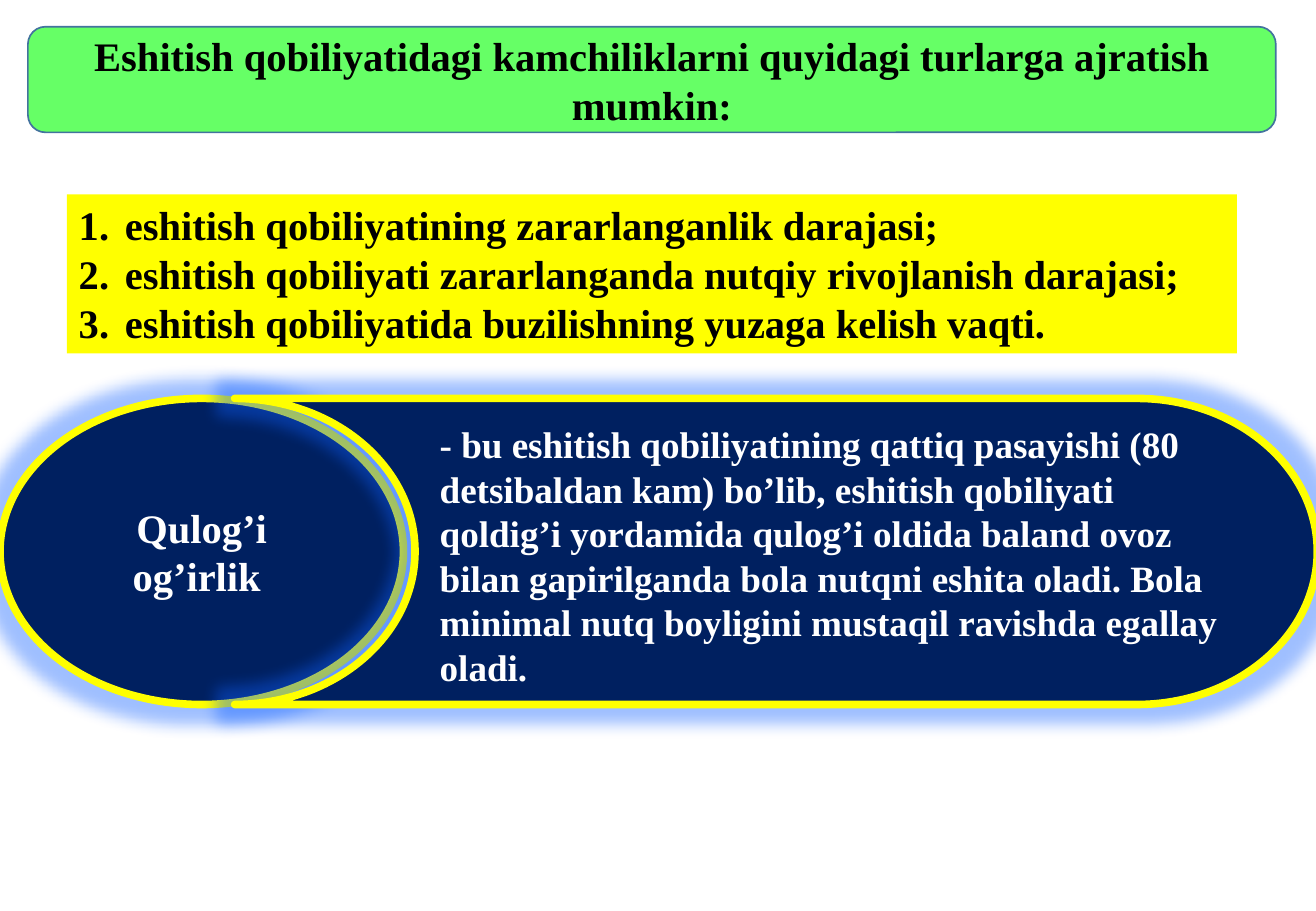
from lxml import etree
from pptx import Presentation
from pptx.dml.color import RGBColor
from pptx.enum import shapes, text
from pptx.oxml import ns
from pptx.util import Inches, Pt

GREEN = RGBColor(0x66, 0xFF, 0x66)
YELLOW = RGBColor(0xFF, 0xFF, 0x00)
NAVY = RGBColor(0x00, 0x20, 0x60)
STEEL = RGBColor(0x43, 0x73, 0x9E)
GLOW = RGBColor(0x10, 0x60, 0xFF)
BLACK = RGBColor(0x00, 0x00, 0x00)
WHITE = RGBColor(0xFF, 0xFF, 0xFF)


def add_panel(kind, box, fill, line=None, width=0):
    shape = slide.shapes.add_shape(kind, *map(Inches, box))
    shape.shadow.inherit = False
    shape.fill.solid()
    shape.fill.fore_color.rgb = fill
    if line is None:
        shape.line.fill.background()
    else:
        shape.line.color.rgb = line
        shape.line.width = Pt(width)
    return shape


def write(shape, lines, size, color, align, anchor):
    frame = shape.text_frame
    frame.word_wrap = True
    frame.vertical_anchor = anchor
    frame.text = "\n".join(lines)
    font_format = {"name": "Times New Roman", "size": Pt(size), "bold": True}
    for paragraph in frame.paragraphs:
        paragraph.alignment = align
        font = paragraph.runs[0].font
        font.color.rgb = color
        for name, value in font_format.items():
            setattr(font, name, value)


presentation = Presentation()
presentation.slide_width = Inches(10.83)
presentation.slide_height = Inches(7.5)
slide = presentation.slides.add_slide(presentation.slide_layouts[6])

LEFT, CENTER = text.PP_ALIGN.LEFT, text.PP_ALIGN.CENTER
TOP, MIDDLE = text.MSO_ANCHOR.TOP, text.MSO_ANCHOR.MIDDLE

# Title
title = add_panel(shapes.MSO_SHAPE.ROUNDED_RECTANGLE, (0.23, 0.22, 10.27, 0.87), GREEN, STEEL, 1)
write(title, ["Eshitish qobiliyatidagi kamchiliklarni quyidagi turlarga ajratish mumkin:"],
      24, BLACK, CENTER, MIDDLE)

# Numbered list
criteria = add_panel(shapes.MSO_SHAPE.RECTANGLE, (0.55, 1.6, 9.63, 1.31), YELLOW)
write(criteria, [
    "eshitish qobiliyatining zararlanganlik darajasi;",
    "eshitish qobiliyati zararlanganda nutqiy rivojlanish darajasi;",
    "eshitish qobiliyatida buzilishning yuzaga kelish vaqti.",
], 24, BLACK, LEFT, TOP)
for paragraph in criteria.text_frame.paragraphs:
    properties = paragraph._p.get_or_add_pPr()
    properties.set("marL", str(Inches(0.38)))
    properties.set("indent", str(-Inches(0.38)))
    etree.SubElement(properties, ns.qn("a:buAutoNum"), type="arabicPeriod")

# Term and definition panels with a blue glow
term = add_panel(shapes.MSO_SHAPE.OVAL, (0, 3.28, 3.32, 2.52), NAVY, YELLOW, 4.5)
write(term, ["Qulog’i og’irlik "], 24, WHITE, CENTER, MIDDLE)
definition = add_panel(shapes.MSO_SHAPE.FLOWCHART_STORED_DATA, (1.93, 3.28, 8.91, 2.52),
                       NAVY, YELLOW, 4.5)
definition.rotation = 180
for shape in (term, definition):
    effects = shape._element.spPr.find(ns.qn("a:effectLst"))
    glow = etree.SubElement(effects, ns.qn("a:glow"), rad=str(Pt(18)))
    color = etree.SubElement(glow, ns.qn("a:srgbClr"), val=str(GLOW))
    etree.SubElement(color, ns.qn("a:alpha"), val="40000")

# Definition text
caption = slide.shapes.add_textbox(Inches(3.52), Inches(3.42), Inches(6.69), Inches(2.32))
write(caption, [
    "- bu eshitish qobiliyatining qattiq pasayishi (80 detsibaldan kam) bo’lib, "
    "eshitish qobiliyati qoldig’i yordamida qulog’i oldida baland ovoz bilan "
    "gapirilganda bola nutqni eshita oladi. Bola minimal nutq boyligini mustaqil "
    "ravishda egallay oladi."
], 22, WHITE, LEFT, TOP)

presentation.save("out.pptx")
